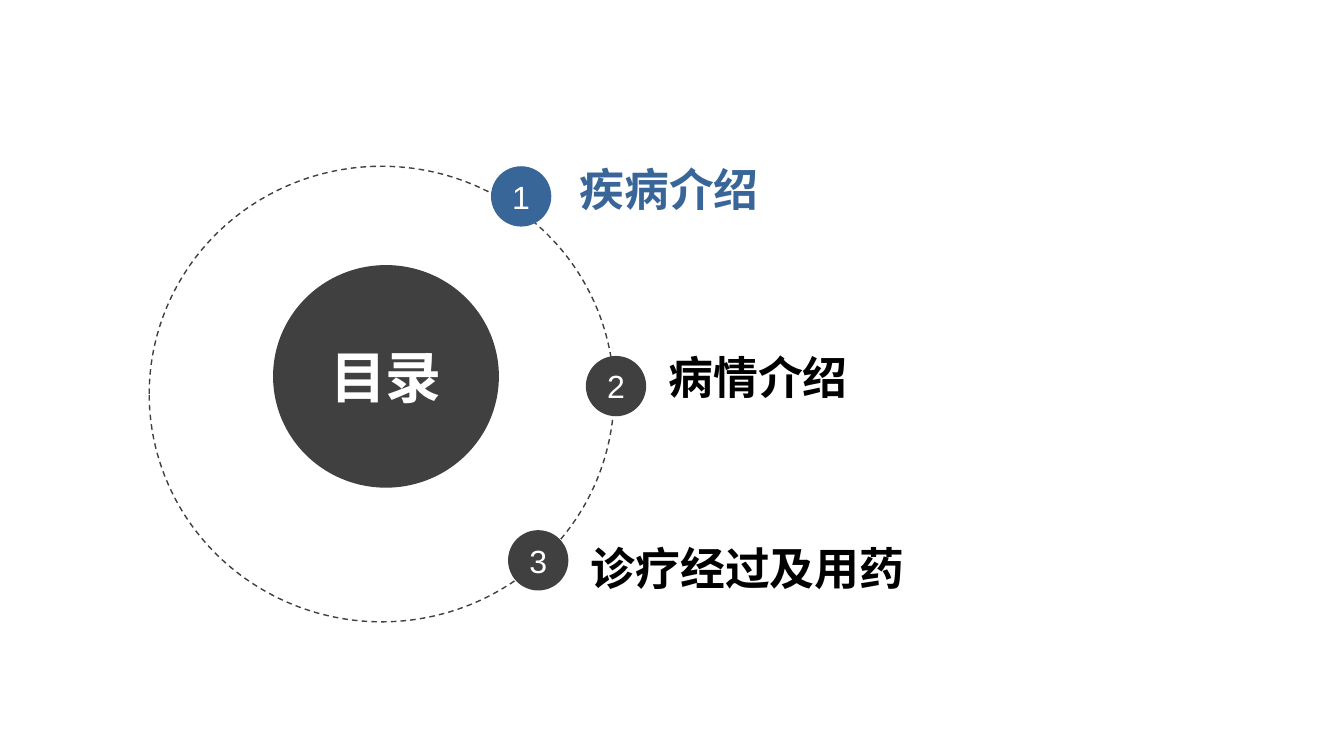
"""Build a table-of-contents slide with three numbered entries on a dashed ring."""
from lxml import etree
from pptx import Presentation, util as u
from pptx.dml.color import RGBColor
from pptx.enum import dml, shapes, text
from pptx.oxml.ns import qn

DARK, BLUE, BLACK, WHITE = "404040", "396698", "000000", "FFFFFF"
CJK = "Noto Sans CJK SC"
BADGE = 1.52


def add_circle(left, top, width, height, fill=None):
    circle = slide.shapes.add_shape(
        shapes.MSO_SHAPE.OVAL, u.Cm(left), u.Cm(top), u.Cm(width), u.Cm(height))
    circle.shadow.inherit = False
    circle.line.fill.background()
    if fill:
        circle.fill.solid()
        circle.fill.fore_color.rgb = RGBColor.from_string(fill)
    else:
        circle.fill.background()
    return circle


def write(shape, words, size, color, font, bold=False, centred=True):
    frame = shape.text_frame
    frame.word_wrap = True
    paragraph = frame.paragraphs[0]
    paragraph.alignment = text.PP_ALIGN.LEFT
    if centred:
        paragraph.alignment = text.PP_ALIGN.CENTER
        frame.vertical_anchor = text.MSO_ANCHOR.MIDDLE
        frame.margin_left = frame.margin_right = frame.margin_top = frame.margin_bottom = 0
    run = paragraph.add_run()
    run.text = words
    run.font.size, run.font.bold, run.font.name = u.Pt(size), bold, font
    run.font.color.rgb = RGBColor.from_string(color)
    latin = run.font._element.find(qn("a:latin"))
    latin.addnext(etree.Element(qn("a:ea"), typeface=CJK))


deck = Presentation()
deck.slide_width, deck.slide_height = u.Cm(33.86), u.Cm(19.05)
slide = deck.slides.add_slide(deck.slide_layouts[6])

ring = add_circle(3.76, 4.19, 11.71, 11.48)
ring.line.color.rgb = RGBColor.from_string(DARK)
ring.line.width = u.Pt(1)
ring.line.dash_style = dml.MSO_LINE.DASH

add_circle(6.88, 6.68, 5.69, 5.61, DARK)
heading = add_circle(6.17, 7.09, 7.11, 4.8)
write(heading, "目录", 40, WHITE, "Arial", bold=True)

entries = [
    ("疾病介绍", (12.37, 4.19), (14.35, 3.96, 13.72), BLUE, BLUE),
    ("病情介绍", (14.76, 8.97), (16.59, 8.69, 13.18), DARK, BLACK),
    ("诊疗经过及用药", (12.8, 13.36), (14.63, 13.49, 15.88), DARK, BLACK),
]
for number, (topic, spot, (left, top, width), fill, color) in enumerate(entries, 1):
    badge = add_circle(*spot, BADGE, BADGE, fill)
    write(badge, str(number), 22.9, WHITE, "Arial")
    label = slide.shapes.add_textbox(u.Cm(left), u.Cm(top), u.Cm(width), u.Cm(1.63))
    write(label, topic, 32, color, CJK, bold=True, centred=False)

deck.save("out.pptx")
